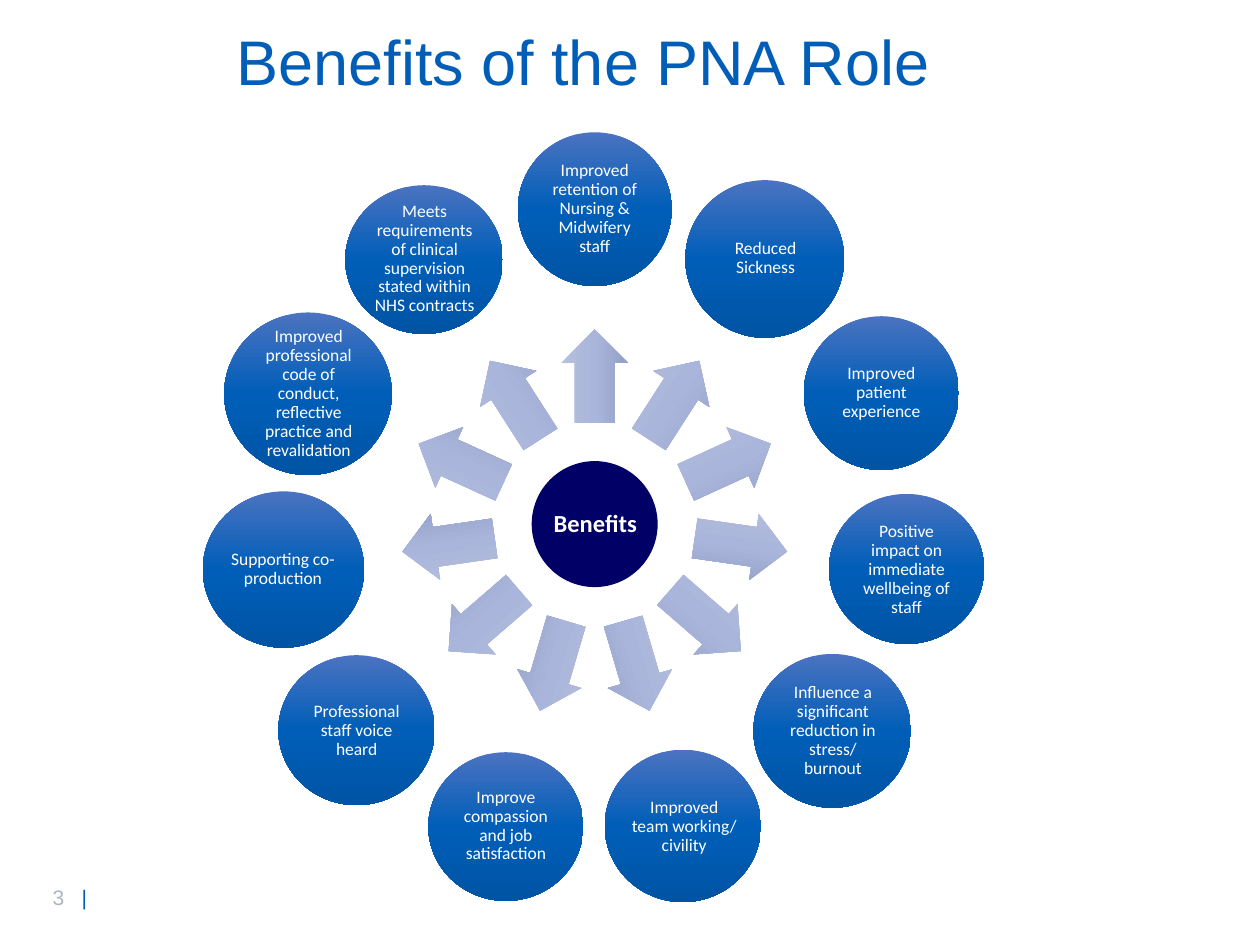
"""Build the slide on the benefits of the PNA role as a wheel of circles."""
import copy
import math

import pptx
import pptx.dml.color
import pptx.enum.shapes
import pptx.enum.text
import pptx.oxml.ns
import pptx.util

SCALE = 9144
HUES = {
    "blue": "005EB8", "navy": "000066", "grey": "ADB6BE", "white": "FFFFFF",
    "sky": "4B73C1", "deep": "0054A4",
    "pale": "B6BFDE", "mist": "A9B5DA", "dusk": "939FC5",
}
CIRCLE = ("sky", "blue", "deep")
ARROW = ("pale", "mist", "dusk")
HUB = (472, 416)
RING, SPOKE = 250, 117
ITEMS = [
    ("Improved retention of Nursing & Midwifery staff", 122, 122),
    ("Reduced Sickness", 126, 125),
    ("Improved patient experience", 123, 122),
    ("Positive impact on immediate wellbeing of staff", 123, 119),
    ("Influence a significant reduction in stress/ burnout", 125, 122),
    ("Improved team working/ civility", 124, 121),
    ("Improve compassion and job satisfaction", 123, 118),
    ("Professional staff voice heard", 124, 119),
    ("Supporting co-production", 128, 124),
    ("Improved professional code of conduct, reflective practice and "
     "revalidation", 133, 129),
    ("Meets requirements of clinical supervision stated within NHS contracts",
     125, 118),
]


def px(num):
    """Turn px into EMU."""
    return pptx.util.Emu(round(num) * SCALE)


def tint(hue):
    """Look up a named colour."""
    return pptx.dml.color.RGBColor.from_string(HUES[hue])


def write(frame, text, size=10, hue="white", font="Calibri", bold=False,
          align="CENTER", lines=0.9):
    """Add a formatted run to the first paragraph of a frame."""
    para = frame.paragraphs[0]
    para.alignment = getattr(pptx.enum.text.PP_ALIGN, align)
    para.line_spacing = lines
    run = para.add_run()
    run.text = text
    run.font.size = pptx.util.Pt(size)
    run.font.name = font
    run.font.bold = bold
    run.font.color.rgb = tint(hue)


class Deck:
    """Hold the style and the current slide."""

    def __init__(self):
        """Open a deck with one title slide."""
        self.show = pptx.Presentation()
        self.show.slide_width, self.show.slide_height = px(1000), px(750)
        self.slide = self.show.slides.add_slide(self.show.slide_layouts[5])
        self.home = self.slide.shapes

    def title(self, text, x, y, w, h):
        """Place and fill the title."""
        box = self.slide.shapes.title
        box.left, box.top, box.width, box.height = map(px, (x, y, w, h))
        box.text_frame.vertical_anchor = pptx.enum.text.MSO_ANCHOR.MIDDLE
        write(box.text_frame, text, size=36, hue="blue", font="Arial")

    def number(self, num, x, y, w, h):
        """Write the page number and its bar."""
        frame = self.home.add_textbox(*map(px, (x, y, w, h))).text_frame
        frame.word_wrap = True
        props = frame.paragraphs[0]._p.get_or_add_pPr()
        tabs = props.makeelement(pptx.oxml.ns.qn("a:tabLst"), {})
        stop = {"pos": str(px(23)), "algn": "l"}
        tabs.append(tabs.makeelement(pptx.oxml.ns.qn("a:tab"), stop))
        props.append(tabs)
        look = {"size": 12, "font": "Arial", "align": "LEFT", "lines": 1.0}
        write(frame, num, hue="grey", **look)
        write(frame, "\t|", hue="blue", **look)

    def group(self):
        """Send later shapes to a new group."""
        self.home = self.slide.shapes.add_group_shape().shapes

    def shape(self, kind, mid, w, h, hues):
        """Draw a centred preset shape with a plain or graded fill."""
        kind = getattr(pptx.enum.shapes.MSO_SHAPE, kind)
        spot = (mid[0] - w / 2, mid[1] - h / 2, w, h)
        form = self.home.add_shape(kind, *map(px, spot))
        form.shadow.inherit = False
        form.line.fill.background()
        if len(hues) == 1:
            form.fill.solid()
            form.fill.fore_color.rgb = tint(hues[0])
            return form
        form.fill.gradient()
        form.fill.gradient_angle = 270
        stops = form._element.spPr.find(".//" + pptx.oxml.ns.qn("a:gsLst"))
        stops.insert(1, copy.deepcopy(stops[0]))
        for i, stop in enumerate(form.fill.gradient_stops):
            stop.position = i / 2
            stop.color.rgb = tint(hues[i])
        return form

    def disc(self, text, mid, w, h, hues, pad=1, **look):
        """Draw a circle with a label in its inner square."""
        self.shape("OVAL", mid, w, h, hues)
        w, h = w * math.sqrt(0.5), h * math.sqrt(0.5)
        spot = (mid[0] - w / 2, mid[1] - h / 2, w, h)
        frame = self.home.add_textbox(*map(px, spot)).text_frame
        frame.word_wrap = True
        frame.vertical_anchor = pptx.enum.text.MSO_ANCHOR.MIDDLE
        frame.margin_left = frame.margin_right = px(pad)
        frame.margin_top = frame.margin_bottom = px(pad)
        write(frame, text, **look)

    def arrow(self, mid, turn):
        """Draw a block arrow turned by some degrees."""
        form = self.shape("RIGHT_ARROW", mid, 74, 53, ARROW)
        form.adjustments[0], form.adjustments[1] = 0.6, 0.5
        form.rotation = turn % 360


def orbit(turn, far):
    """Find the point at an angle and distance from the hub."""
    rad = math.radians(turn)
    return HUB[0] + far * math.cos(rad), HUB[1] + far * math.sin(rad)


def main():
    """Build and save the slide."""
    deck = Deck()
    deck.number("3", 32, 697, 71, 30)
    deck.title("Benefits of the PNA Role ", 111, 18, 718, 67)
    deck.group()
    deck.disc("Benefits", HUB, 100, 100, ["navy"], pad=2, size=14, bold=True)
    for i, (text, w, h) in enumerate(ITEMS):
        turn = 360 * i / len(ITEMS) - 90
        deck.arrow(orbit(turn, SPOKE), turn)
        deck.disc(text, orbit(turn, RING), w, h, CIRCLE)
    deck.show.save("out.pptx")


if __name__ == "__main__":
    main()
